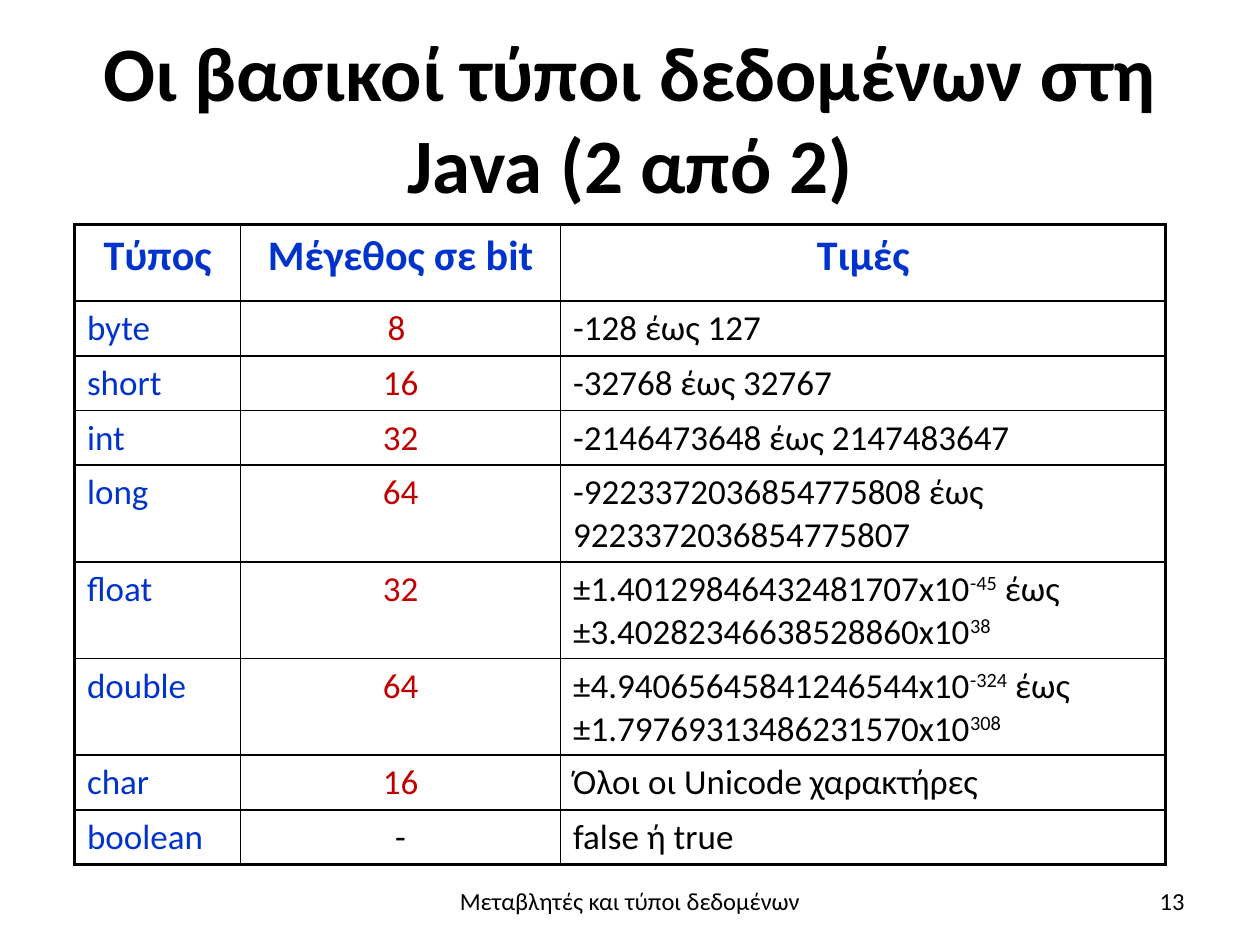
from lxml import etree
from pptx import Presentation
from pptx import util as u
from pptx.dml import color
from pptx.enum import text
from pptx.oxml import ns

COLORS = {"ink": "000000", "type": "0033CC", "size": "C00000"}
FONT = "Calibri"
LEFT, CENTER, RIGHT = text.PP_ALIGN.LEFT, text.PP_ALIGN.CENTER, text.PP_ALIGN.RIGHT
HEADINGS = ["Τύπος", "Μέγεθος σε bit", "Τιμές"]
DATA_TYPES = [
    ("byte", "8 ", ["-128 έως 127"]),
    ("short", "16", ["-32768 έως 32767"]),
    ("int", "32", ["-2146473648 έως 2147483647"]),
    ("long", "64", ["-9223372036854775808 έως 9223372036854775807"]),
    ("float", "32", ["±1.40129846432481707x10", "-45", " έως ±3.40282346638528860x10", "38"]),
    ("double", "64", ["±4.94065645841246544x10", "-324", " έως ±1.79769313486231570x10", "308"]),
    ("char", "16", ["Όλοι οι Unicode χαρακτήρες"]),
    ("boolean", "-", ["false ή true"]),
]
COLUMN_WIDTHS = [3.35, 6.45, 12.2]
ROW_HEIGHTS = [1.55, 1.07, 1.07, 1.07, 1.88, 1.88, 1.88, 1.07, 0.89]


def write(frame, pieces, size, ink="ink", align=LEFT, bold=False):
    """Write the pieces as runs, raising every second one as an exponent."""
    paragraph = frame.paragraphs[0]
    paragraph.alignment = align
    for index, piece in enumerate(pieces):
        run = paragraph.add_run()
        run.text = piece
        run.font.name = FONT
        run.font.size = u.Pt(size)
        run.font.bold = bold
        run.font.color.rgb = color.RGBColor.from_string(COLORS[ink])
        if index % 2:
            run._r.get_or_add_rPr().set("baseline", "30000")


def add_line_of_text(slide, box, words, size, align, bold=False):
    """Place a vertically centred text box in the given box."""
    frame = slide.shapes.add_textbox(*map(u.Cm, box)).text_frame
    frame.word_wrap = True
    frame.vertical_anchor = text.MSO_ANCHOR.MIDDLE
    write(frame, [words], size, align=align, bold=bold)


def set_borders(cell, widths):
    """Draw the left, right, top and bottom borders in the given points."""
    properties = cell._tc.get_or_add_tcPr()
    for side, width in zip("LRTB", widths):
        line = etree.SubElement(properties, ns.qn(f"a:ln{side}"), w=str(u.Pt(width)))
        fill = etree.SubElement(line, ns.qn("a:solidFill"))
        etree.SubElement(fill, ns.qn("a:srgbClr"), val=COLORS["ink"])


def add_types_table(slide, left, top):
    """Place the table of data types with its corner at left, top."""
    rows, columns = len(ROW_HEIGHTS), len(COLUMN_WIDTHS)
    box = (left, top, sum(COLUMN_WIDTHS), sum(ROW_HEIGHTS))
    table = slide.shapes.add_table(rows, columns, *map(u.Cm, box)).table
    table.first_row = table.horz_banding = False
    for column, width in zip(table.columns, COLUMN_WIDTHS):
        column.width = u.Cm(width)
    for row, height in zip(table.rows, ROW_HEIGHTS):
        row.height = u.Cm(height)

    for c, heading in enumerate(HEADINGS):
        write(table.cell(0, c).text_frame, [heading], 24, "type", CENTER, True)
    for r, (name, bits, values) in enumerate(DATA_TYPES, start=1):
        write(table.cell(r, 0).text_frame, [name], 20, "type")
        bits_ink = "ink" if bits == "-" else "size"
        write(table.cell(r, 1).text_frame, [bits], 20, bits_ink, CENTER)
        write(table.cell(r, 2).text_frame, values, 20)

    for r in range(rows):
        for c in range(columns):
            cell = table.cell(r, c)
            outer = (c == 0, c == columns - 1, r == 0, r == rows - 1)
            set_borders(cell, [2 if edge else 1 for edge in outer])
            cell.fill.background()


def add_footer(slide, left, top, width, height):
    """Place the lecture name in the middle and the page number at the right."""
    name_width, number_width = 8.05, 5.92
    name_left = left + (width - name_width) / 2
    number_left = left + width - number_width
    add_line_of_text(slide, (name_left, top, name_width, height),
                     "Μεταβλητές και τύποι δεδομένων", 14, CENTER)
    add_line_of_text(slide, (number_left, top, number_width, height), "13", 14, RIGHT)


def main():
    """Build the slide and save it."""
    deck = Presentation()
    deck.slide_width, deck.slide_height = u.Cm(25.4), u.Cm(19.05)
    slide = deck.slides.add_slide(deck.slide_layouts[6])
    add_line_of_text(slide, (1.27, 0.76, 22.86, 3.18),
                     "Οι βασικοί τύποι δεδομένων στη Java (2 από 2)", 44, CENTER, True)
    add_types_table(slide, 1.5, 4.52)
    add_footer(slide, 1.27, 17.65, 22.86, 1.02)
    deck.save("out.pptx")


if __name__ == "__main__":
    main()
